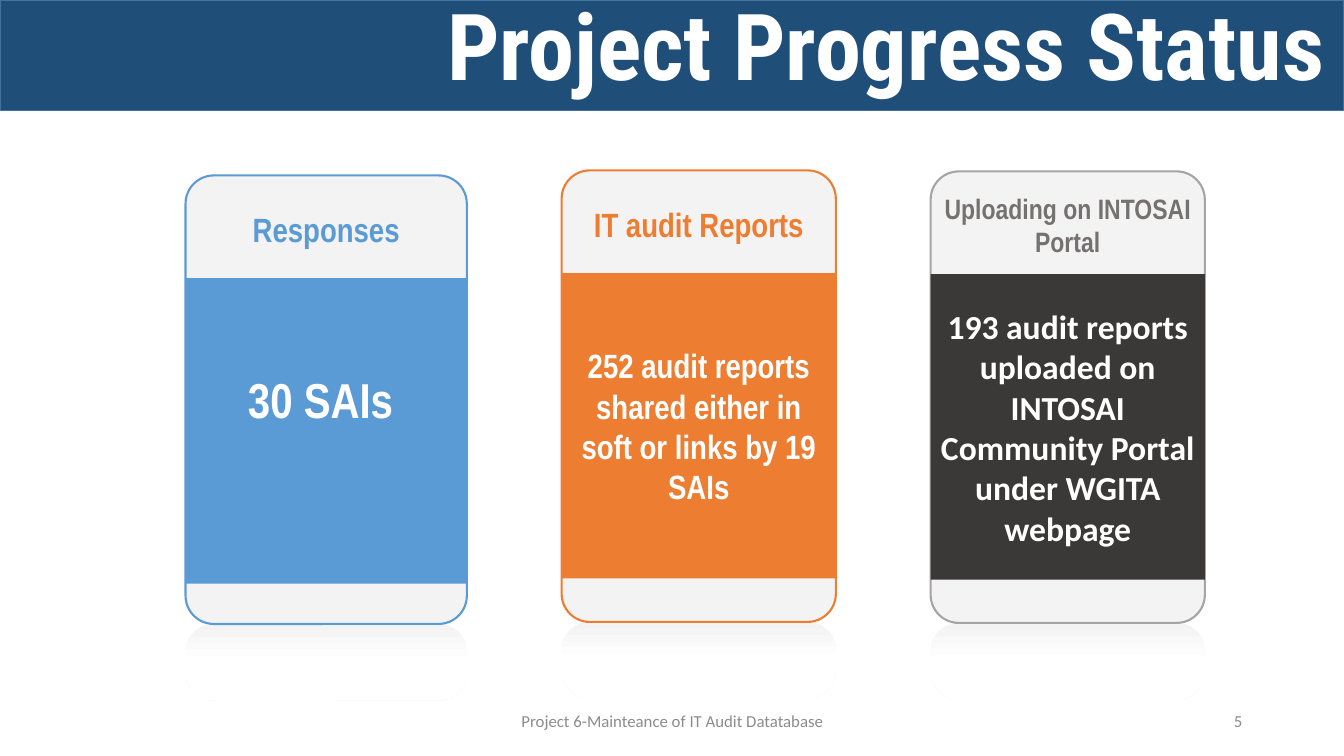
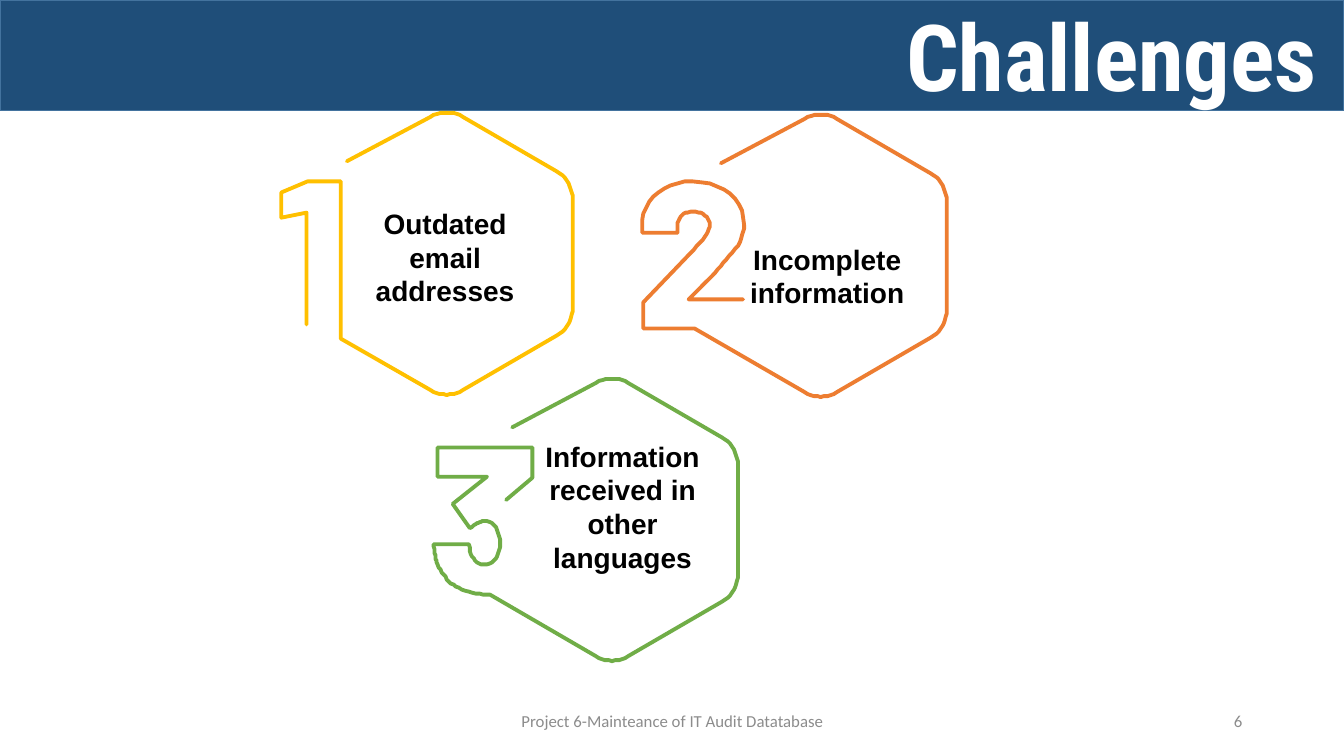
from lxml import etree
from pptx import Presentation
from pptx import util as u
from pptx.dml.color import RGBColor
from pptx.enum import shapes, text
from pptx.oxml.ns import qn

PX = 9144  # 100 px to the inch
WHITE, BLACK, NAVY, NAVY_EDGE = "FFFFFF", "000000", "1F4E79", "43739E"
PANEL, FOOTER_GREY = "F3F3F3", "8C8C8C"
BLUE, ORANGE, YELLOW, GREEN = "5B9BD5", "ED7D31", "FFC000", "70AD47"
SILVER, GREY, CHARCOAL = "A5A5A5", "767171", "3B3838"
FOOTER = "Project 6-Mainteance of IT Audit Datatabase"
CARD_RADIUS = 28
CURVE_STEPS = 10
LEFT, CENTER, RIGHT = text.PP_ALIGN.LEFT, text.PP_ALIGN.CENTER, text.PP_ALIGN.RIGHT
MIDDLE, BOTTOM = text.MSO_ANCHOR.MIDDLE, text.MSO_ANCHOR.BOTTOM

# Outlines run from the hexagon's centre: pairs are line ends, sixes are Bezier curves.
HEXAGON = [(-99, -92), (-16, -136), (-5, -142, 6, -142, 16, -136), (109, -82),
           (119, -76, 125, -66, 125, -54), (125, 54), (125, 65, 119, 75, 109, 81),
           (16, 135), (6, 141, -6, 141, -16, 135)]
ONE = [(-105, 84), (-105, -72), (-138, -72), (-164, -61), (-164, -36), (-139, -41),
       (-139, 70)]
TWO = [(-125, 72), (-176, 72), (-176, 46), (-130, -2),
       (-117, -16, -110, -24, -110, -31), (-110, -39, -117, -44, -127, -44),
       (-135, -44, -142, -39, -142, -30), (-142, -23), (-177, -23), (-177, -36),
       (-174, -58, -154, -74, -127, -74), (-97, -74, -76, -56, -76, -31),
       (-76, -19, -82, -9, -94, 4), (-102, 14, -114, 26, -126, 38),
       (-131, 43), (-77, 43)]
THREE = [(-121, 74), (-132, 74, -146, 71, -155, 66), (-163, 61, -169, 53, -173, 44),
         (-175, 38, -176, 32, -177, 24), (-142, 24), (-140, 36, -137, 44, -127, 44),
         (-117, 44, -111, 36, -111, 23), (-111, 10, -117, 1, -127, 1),
         (-131, 1, -133, 3, -141, 8), (-158, -16), (-124, -43), (-173, -43),
         (-173, -72), (-79, -72), (-79, -42), (-105, -20)]


def rgb(hex_code):
    return RGBColor.from_string(hex_code)


def write(frame, words, font, size, color, bold=True, align=CENTER, anchor=MIDDLE):
    frame.word_wrap = True
    frame.vertical_anchor = anchor
    frame.text = words
    line = frame.paragraphs[0]
    line.alignment = align
    style = line.runs[0].font
    style.name, style.size, style.bold = font, u.Pt(size), bold
    style.color.rgb = rgb(color)
    return line


def add_label(slide, box, words, *style, **layout):
    label = slide.shapes.add_textbox(*(n * PX for n in box))
    return write(label.text_frame, words, *style, **layout)


def add_block(slide, kind, box, fill=None, edge=None, weight=1.5):
    block = slide.shapes.add_shape(kind, *(n * PX for n in box))
    block.shadow.inherit = False
    if fill:
        block.fill.solid()
        block.fill.fore_color.rgb = rgb(fill)
    if edge:
        block.line.color.rgb = rgb(edge)
        block.line.width = u.Pt(weight)
    else:
        block.line.fill.background()
    return block


def add_frame(prs, title, title_box, number):
    """Start a slide with the title band, footer and page number."""
    slide = prs.slides.add_slide(prs.slide_layouts[6])
    add_block(slide, shapes.MSO_SHAPE.RECTANGLE, (0, 0, 1333, 110), NAVY, NAVY_EDGE, 1)
    heading = add_label(slide, title_box, title, "Roboto Condensed", 66, WHITE, align=RIGHT)
    heading.line_spacing = 0.9
    small = ("Calibri", 12, FOOTER_GREY, False)
    add_label(slide, (442, 695, 450, 40), FOOTER, *small)
    add_label(slide, (942, 695, 300, 40), str(number), *small, align=RIGHT)
    return slide


def add_rounded(slide, box, *colors):
    panel = add_block(slide, shapes.MSO_SHAPE.ROUNDED_RECTANGLE, box, *colors)
    panel.adjustments[0] = CARD_RADIUS / min(box[2:])
    return panel


def add_card(slide, box, heading, heading_style, body, body_style, colors, lift=0):
    """Panel with a heading, a filled body and a fading reflection below."""
    left, top, width, height = box
    edge, fill = colors
    reflection = add_rounded(slide, (left, top + height, width, 76))
    reflection.fill.gradient()
    reflection.fill.gradient_angle = 270
    for stop, color, position in zip(reflection.fill.gradient_stops, (PANEL, WHITE), (0, 0.5)):
        stop.color.rgb = rgb(color)
        stop.position = position
    add_rounded(slide, box, PANEL, edge)
    add_label(slide, (left, top + 26, width, 54), heading, "Arial Narrow", *heading_style)
    middle = add_block(slide, shapes.MSO_SHAPE.RECTANGLE, (left, top + 102, width, 303), fill)
    write(middle.text_frame, body, *body_style, WHITE)
    middle.text_frame.margin_bottom = (5 + 2 * lift) * PX


def flatten(outline):
    """Turn lines and Bezier curves into one list of points."""
    points = [outline[0]]
    for step in outline[1:]:
        if len(step) == 2:
            points.append(step)
            continue
        knots = [points[-1], step[:2], step[2:4], step[4:]]
        for i in range(1, CURVE_STEPS + 1):
            t = i / CURVE_STEPS
            weights = ((1 - t) ** 3, 3 * t * (1 - t) ** 2, 3 * t * t * (1 - t), t ** 3)
            points.append(tuple(sum(w * knot[axis] for w, knot in zip(weights, knots))
                                for axis in (0, 1)))
    return points


def add_challenge(slide, center, digit, words, words_left, color):
    """Hexagon whose single stroke runs on into a numeral."""
    x, y = center
    points = [(x + dx, y + dy) for dx, dy in flatten(HEXAGON + digit)]
    pen = slide.shapes.build_freeform(*points[0], scale=PX)
    pen.add_line_segments(points[1:], close=False)
    stroke = pen.convert_to_shape()
    stroke.shadow.inherit = False
    stroke.fill.background()
    stroke.line.color.rgb = rgb(color)
    stroke.line.width = u.Pt(2.75)
    ln = stroke.line._get_or_add_ln()
    ln.set("cap", "rnd")
    etree.SubElement(ln, qn("a:round"))
    label = slide.shapes.add_textbox(*(n * PX for n in (x + words_left, y - 87, 197, 145)))
    label.text_frame.margin_left = label.text_frame.margin_right = 0
    write(label.text_frame, words, "Arial", 20, BLACK, anchor=BOTTOM)


def build_progress(prs):
    slide = add_frame(prs, "Project Progress Status", (81, -22, 1243, 145), 5)
    add_card(slide, (184, 174, 279, 445), "Responses", (24, BLUE),
             "30 SAIs ", ("Arial Narrow", 35), (BLUE, BLUE), lift=32)
    add_card(slide, (557, 169, 272, 448), "IT audit Reports", (24, ORANGE),
             "252 audit reports shared either in soft or links by 19 SAIs",
             ("Arial Narrow", 24), (ORANGE, ORANGE))
    add_card(slide, (923, 170, 272, 448), "Uploading on INTOSAI Portal", (20, GREY),
             "193 audit reports uploaded on INTOSAI Community Portal under WGITA webpage",
             ("Calibri", 24), (SILVER, CHARCOAL))


def build_challenges(prs):
    slide = add_frame(prs, "Challenges", (73, -11, 1243, 145), 6)
    add_challenge(slide, (443, 252), ONE, "Outdated email addresses", -100, YELLOW)
    add_challenge(slide, (814, 254), TWO, "Incomplete information", -92, ORANGE)
    add_challenge(slide, (607, 516), THREE, "Information received in other languages",
                  -88, GREEN)


def main():
    prs = Presentation()
    prs.slide_width, prs.slide_height = u.Inches(13.33), u.Inches(7.5)
    build_progress(prs)
    build_challenges(prs)
    prs.save("out.pptx")


if __name__ == "__main__":
    main()
